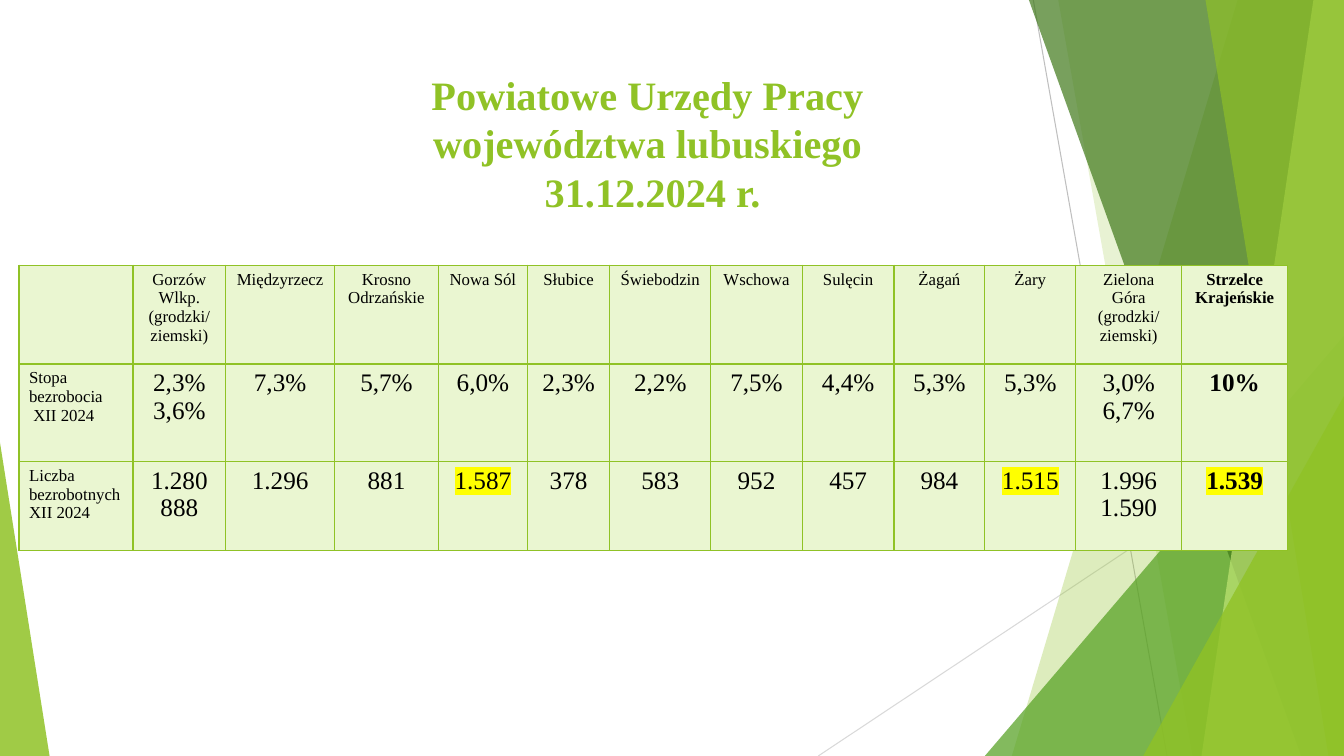
from dataclasses import dataclass

from lxml import etree
from pptx import Presentation
from pptx.dml.color import RGBColor
from pptx.enum.shapes import MSO_CONNECTOR, MSO_SHAPE
from pptx.enum.text import MSO_ANCHOR, PP_ALIGN
from pptx.oxml.ns import qn
from pptx.util import Cm, Pt

CENTER, LEFT = PP_ALIGN.CENTER, PP_ALIGN.LEFT
TOP = MSO_ANCHOR.TOP
TRIANGLE = MSO_SHAPE.ISOSCELES_TRIANGLE
STRAIGHT = MSO_CONNECTOR.STRAIGHT


@dataclass(frozen=True)
class Theme:
    font: str = "Times New Roman"
    green: str = "90C226"
    leaf: str = "54A021"
    forest: str = "3F7819"
    lime: str = "C0E474"
    cell: str = "EAF6D1"
    text: str = "000000"
    highlight: str = "FFFF00"
    gray: str = "BFBFBF"
    light_gray: str = "D9D9D9"
    title_size: float = 28.8
    title_leading: float = 34.6
    label_size: float = 12
    value_size: float = 18
    thin: float = 1
    thick: float = 2


THEME = Theme()
WIDTH, HEIGHT = 33.87, 19.05
TABLE_LEFT, TABLE_TOP = 0.48, 6.68
COLUMN_WIDTHS = [2.87, 2.34, 2.74, 2.62, 2.24, 2.08, 2.54, 2.31, 2.31, 2.29, 2.29, 2.67, 2.67]
ROW_HEIGHTS = [2.49, 2.46, 2.24]

TITLE = "Powiatowe Urzędy Pracy \vwojewództwa lubuskiego \v31.12.2024 r."
OFFICES = [
    ["", "Gorzów Wlkp.\v(grodzki/ ziemski)", "Międzyrzecz", "Krosno Odrzańskie",
     "Nowa Sól", "Słubice", "Świebodzin", "Wschowa", "Sulęcin", "Żagań", "Żary",
     "Zielona Góra (grodzki/ ziemski)", "Strzelce Krajeńskie"],
    ["Stopa bezrobocia\v XII 2024", "2,3%\n3,6%", "7,3%", "5,7%", "6,0%", "2,3%",
     "2,2%", "7,5%", "4,4%", "5,3%", "5,3%", "3,0%\n6,7%", "10%"],
    ["Liczba bezrobotnych XII 2024", "1.280\n888", "1.296", "881", "1.587", "378",
     "583", "952", "457", "984", "1.515", "1.996\n1.590", "1.539"],
]
HIGHLIGHTED = {"1.587", "1.515", "1.539"}

RAYS = [
    ((26.04, 0), (29.41, HEIGHT), THEME.gray),
    ((WIDTH, 10.24), (20.62, HEIGHT), THEME.light_gray),
]
BACK_BANDS = [(31.19, 25.5, THEME.green, 30), (26.67, 30.05, THEME.green, 20)]
FRONT_BANDS = [
    (25.93, 32.79, THEME.forest, 70),
    (33.1, 30.28, THEME.lime, 70),
    (30.38, 33.48, THEME.green, 65),
]


def paint(shape, color, opacity):
    shape.shadow.inherit = False
    shape.fill.solid()
    shape.fill.fore_color.rgb = RGBColor.from_string(color)
    tint = shape._element.spPr.find(".//" + qn("a:srgbClr"))
    etree.SubElement(tint, qn("a:alpha"), val=str(opacity * 1000))
    shape.line.fill.background()


def add_ray(slide, start, end, color):
    ray = slide.shapes.add_connector(STRAIGHT, *map(Cm, start + end))
    ray.line.color.rgb = RGBColor.from_string(color)
    ray.line.width = Pt(0.75)
    etree.SubElement(ray._element.spPr, qn("a:effectLst"))


def add_band(slide, top_x, bottom_x, color, opacity):
    outline = slide.shapes.build_freeform(Cm(top_x), 0)
    corners = [(WIDTH, 0), (WIDTH, HEIGHT), (bottom_x, HEIGHT)]
    outline.add_line_segments([(Cm(x), Cm(y)) for x, y in corners])
    paint(outline.convert_to_shape(), color, opacity)


def add_corner(slide, left, top, width, apex, color, opacity):
    corner = slide.shapes.add_shape(TRIANGLE, Cm(left), Cm(top), Cm(width), Cm(HEIGHT - top))
    corner.adjustments[0] = apex
    paint(corner, color, opacity)


def add_backdrop(slide):
    for ray in RAYS:
        add_ray(slide, *ray)
    for band in BACK_BANDS:
        add_band(slide, *band)
    add_corner(slide, 24.82, 8.46, 9.05, 1, THEME.leaf, 72)
    for band in FRONT_BANDS:
        add_band(slide, *band)
    add_corner(slide, 28.81, 9.98, 5.06, 1, THEME.green, 80)
    add_corner(slide, 0, 11.15, 1.25, 0, THEME.green, 85)


def style_paragraph(paragraph, size, color, bold, align):
    paragraph.alignment = align
    paragraph.font.name = THEME.font
    paragraph.font.size = Pt(size)
    paragraph.font.bold = bold
    paragraph.font.color.rgb = RGBColor.from_string(color)


def place_title(slide):
    title = slide.shapes.title
    slide.shapes._spTree.append(title._element)
    title.left, title.top, title.width, title.height = Cm(0.48), Cm(1.57), Cm(31.93), Cm(3.66)
    frame = title.text_frame
    frame.text = TITLE
    frame.word_wrap = True
    frame.vertical_anchor = TOP
    frame.margin_top = Cm(0.19)
    heading = frame.paragraphs[0]
    style_paragraph(heading, THEME.title_size, THEME.green, True, CENTER)
    heading.line_spacing = Pt(THEME.title_leading)


def add_border(cell, side, width):
    border = etree.SubElement(cell._tc.get_or_add_tcPr(), qn("a:ln" + side), w=str(Pt(width)))
    fill = etree.SubElement(border, qn("a:solidFill"))
    etree.SubElement(fill, qn("a:srgbClr"), val=THEME.green)


def highlight(run):
    mark = etree.SubElement(run._r.get_or_add_rPr(), qn("a:highlight"))
    etree.SubElement(mark, qn("a:srgbClr"), val=THEME.highlight)


def fill_cell(cell, content, row, column):
    thick_sides = {0: "B", 1: "T"}
    for side in "LRTB":
        add_border(cell, side, THEME.thick if side == thick_sides.get(row) else THEME.thin)
    cell.fill.solid()
    cell.fill.fore_color.rgb = RGBColor.from_string(THEME.cell)
    cell.text_frame.text = content
    is_label = row == 0 or column == 0
    size = THEME.label_size if is_label else THEME.value_size
    bold = column == len(COLUMN_WIDTHS) - 1
    for paragraph in cell.text_frame.paragraphs:
        style_paragraph(paragraph, size, THEME.text, bold, CENTER if column else LEFT)
        if content in HIGHLIGHTED:
            highlight(paragraph.runs[0])


def add_office_table(slide):
    offices = slide.shapes.add_table(
        len(ROW_HEIGHTS), len(COLUMN_WIDTHS), Cm(TABLE_LEFT), Cm(TABLE_TOP),
        Cm(sum(COLUMN_WIDTHS)), Cm(sum(ROW_HEIGHTS))).table
    for column, width in zip(offices.columns, COLUMN_WIDTHS):
        column.width = Cm(width)
    for row, height in zip(offices.rows, ROW_HEIGHTS):
        row.height = Cm(height)
    for row, contents in enumerate(OFFICES):
        for column, content in enumerate(contents):
            fill_cell(offices.cell(row, column), content, row, column)


def main():
    deck = Presentation()
    deck.slide_width, deck.slide_height = Cm(WIDTH), Cm(HEIGHT)
    slide = deck.slides.add_slide(deck.slide_layouts[5])
    add_backdrop(slide)
    place_title(slide)
    add_office_table(slide)
    deck.save("out.pptx")


if __name__ == "__main__":
    main()
